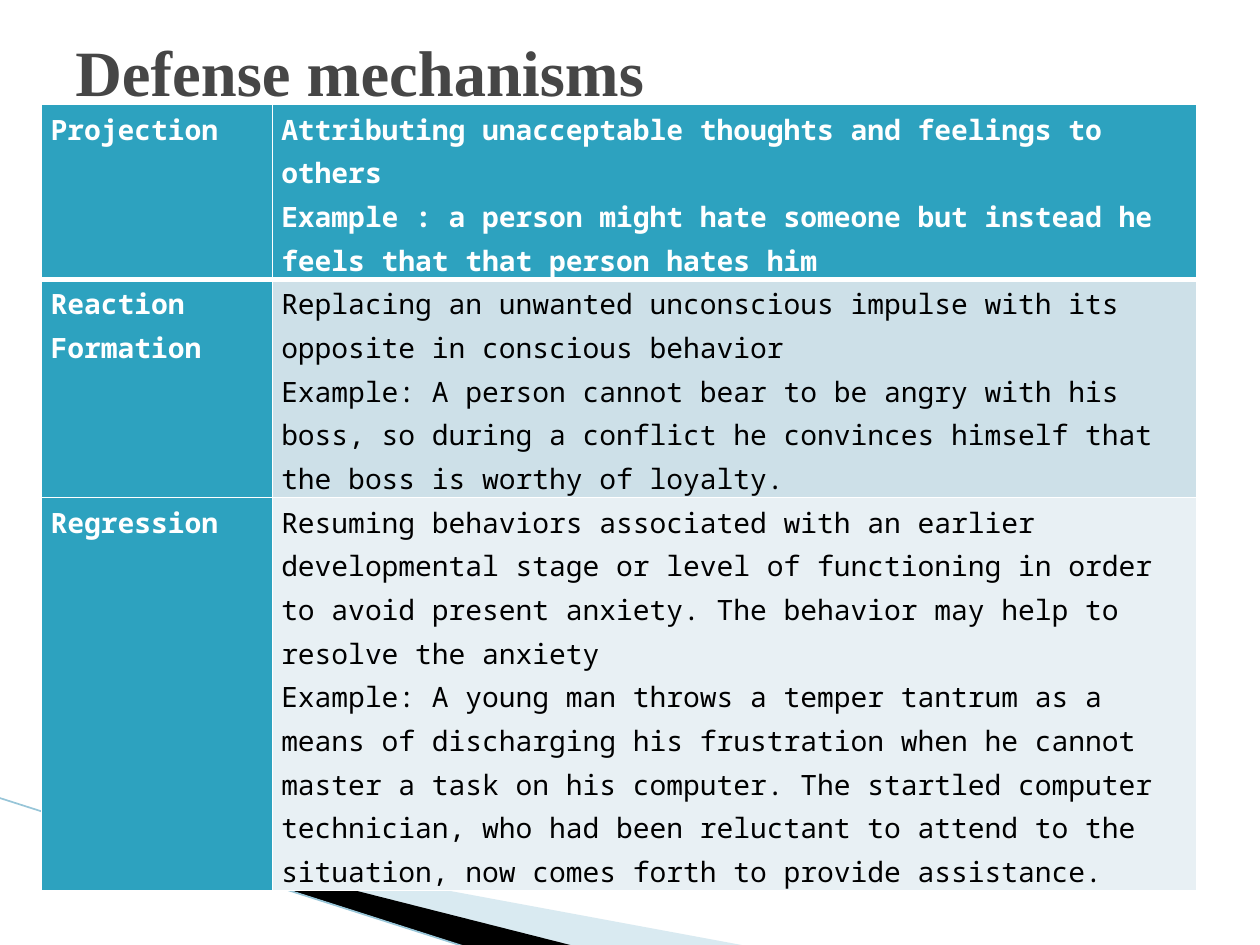
from dataclasses import dataclass

from lxml.etree import SubElement
from pptx import Presentation
from pptx.dml.color import RGBColor
from pptx.enum.shapes import MSO_CONNECTOR
from pptx.enum.text import MSO_ANCHOR
from pptx.oxml.ns import qn
from pptx.util import Cm, Pt


@dataclass(frozen=True)
class Theme:
    title_font: str = "Times New Roman"
    body_font: str = "Noto Sans Mono"
    title_size: float = 36.9
    body_size: float = 16
    title: str = "464646"
    white: str = "FFFFFF"
    black: str = "000000"
    accent: str = "2DA2BF"
    bands: tuple = ("CDE0E8", "E8F0F4")
    ribbon: str = "A0CBDC"
    ribbon_opacity: int = 40
    edge: str = "97C5D8"
    edge_width: float = 0.95
    border_width: float = 1
    header_border_width: float = 3


class SlideBuilder:
    def __init__(self, slide, theme):
        self.slide = slide
        self.theme = theme

    def format_paragraph(self, paragraph, font_name, size, color, bold=True):
        for run in paragraph.runs:
            run.font.name = font_name
            run.font.size = Pt(size)
            run.font.bold = bold
            run.font.color.rgb = RGBColor.from_string(color)

    def ribbon(self, points, color, opacity=100):
        vertices = [(Cm(x), Cm(y)) for x, y in points]
        builder = self.slide.shapes.build_freeform(*vertices[0])
        builder.add_line_segments(vertices[1:], close=True)
        shape = builder.convert_to_shape()
        shape.shadow.inherit = False
        shape.fill.solid()
        shape.fill.fore_color.rgb = RGBColor.from_string(color)
        shape.line.fill.background()
        if opacity < 100:
            color_element = shape._element.spPr.find(qn("a:solidFill"))[0]
            SubElement(color_element, qn("a:alpha"), val=str(opacity * 1000))

    def line(self, start, end):
        connector = self.slide.shapes.add_connector(
            MSO_CONNECTOR.STRAIGHT, *map(Cm, start + end)
        )
        connector.line.color.rgb = RGBColor.from_string(self.theme.edge)
        connector.line.width = Pt(self.theme.edge_width)
        SubElement(connector._element.spPr, qn("a:effectLst"))

    def title(self, text, left, top, width, height):
        shape = self.slide.shapes.add_textbox(Cm(left), Cm(top), Cm(width), Cm(height))
        text_frame = shape.text_frame
        text_frame.word_wrap = True
        text_frame.vertical_anchor = MSO_ANCHOR.MIDDLE
        text_frame.text = text
        self.format_paragraph(
            text_frame.paragraphs[0],
            self.theme.title_font,
            self.theme.title_size,
            self.theme.title,
        )

    def border(self, cell, side, width):
        line = SubElement(
            cell._tc.get_or_add_tcPr(), qn(f"a:ln{side}"), w=str(Pt(width))
        )
        fill = SubElement(line, qn("a:solidFill"))
        SubElement(fill, qn("a:srgbClr"), val=self.theme.white)

    def cell(self, cell, text, fill, color, bold, is_header):
        cell.margin_left = cell.margin_right = Cm(0.18)
        cell.margin_top = cell.margin_bottom = 0
        cell.text_frame.text = text
        for paragraph in cell.text_frame.paragraphs:
            paragraph.line_spacing = 1.15
            self.format_paragraph(
                paragraph, self.theme.body_font, self.theme.body_size, color, bold
            )
        thin = self.theme.border_width
        for side in "LRT" if is_header else "LR":
            self.border(cell, side, thin)
        self.border(cell, "B", self.theme.header_border_width if is_header else thin)
        cell.fill.solid()
        cell.fill.fore_color.rgb = RGBColor.from_string(fill)

    def table(self, rows, left, top, widths, heights):
        table = self.slide.shapes.add_table(
            len(rows), len(widths), Cm(left), Cm(top), Cm(sum(widths)), Cm(sum(heights))
        ).table
        for column, width in zip(table.columns, widths):
            column.width = Cm(width)
        for row, height in zip(table.rows, heights):
            row.height = Cm(height)
        for row_index, row in enumerate(rows):
            for column_index, text in enumerate(row):
                is_header = row_index == 0
                is_label = is_header or column_index == 0
                self.cell(
                    table.cell(row_index, column_index),
                    text,
                    self.theme.accent if is_label else self.theme.bands[row_index - 1],
                    self.theme.white if is_label else self.theme.black,
                    is_label,
                    is_header,
                )


MECHANISMS = [
    (
        "Projection",
        "Attributing unacceptable thoughts and feelings to others\n"
        "Example : a person might hate someone but instead he feels that "
        "that person hates him",
    ),
    (
        "Reaction Formation",
        "Replacing an unwanted unconscious impulse with its opposite in "
        "conscious behavior\n"
        "Example: A person cannot bear to be angry with his boss, so during a "
        "conflict he convinces himself that the boss is worthy of loyalty.",
    ),
    (
        "Regression",
        "Resuming behaviors associated with an earlier developmental stage or "
        "level of functioning in order to avoid present anxiety. The behavior "
        "may help to resolve the anxiety\n"
        "Example: A young man throws a temper tantrum as a means of discharging "
        "his frustration when he cannot master a task on his computer. The "
        "startled computer technician, who had been reluctant to attend to the "
        "situation, now comes forth to provide assistance.",
    ),
]


def main():
    presentation = Presentation()
    presentation.slide_width = Cm(25.4)
    presentation.slide_height = Cm(19.05)
    slide = presentation.slides.add_slide(presentation.slide_layouts[6])
    theme = Theme()
    builder = SlideBuilder(slide, theme)
    builder.ribbon(
        [(1.4, 16.54), (15.11, 19.08), (11.58, 19.08), (1.4, 16.51)],
        theme.ribbon,
        theme.ribbon_opacity,
    )
    builder.ribbon(
        [(1.35, 16.48), (11.61, 19.08), (9.45, 19.1), (1.37, 16.51)], theme.black
    )
    builder.line((-0.03, 16.08), (9.42, 19.1))
    builder.table(MECHANISMS, 0.84, 2.11, [4.65, 18.64], [3.02, 4.04, 7.11])
    builder.title("Defense mechanisms", 1.27, 0.76, 22.86, 1.35)
    presentation.save("out.pptx")


if __name__ == "__main__":
    main()
